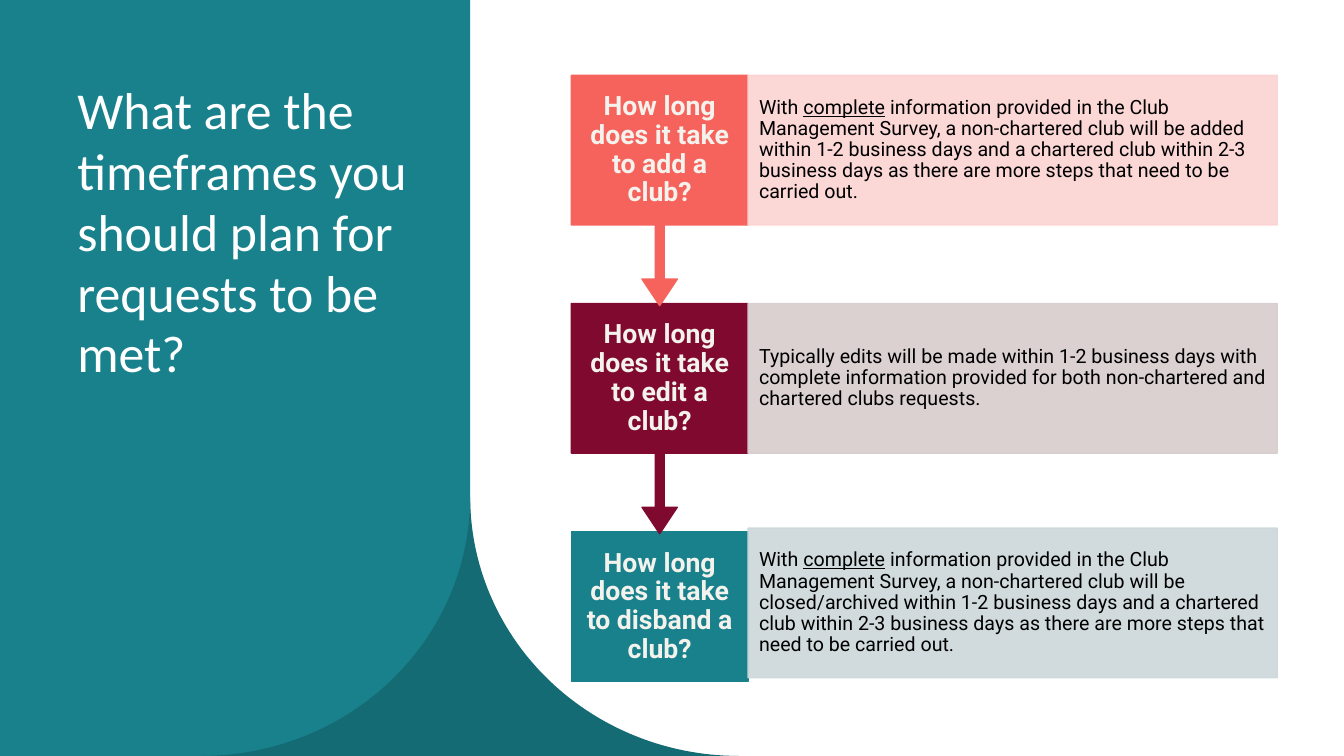
"""Build the slide on the timeframes for club requests."""
from math import cos, pi, sin

from lxml.etree import SubElement
from pptx import Presentation
from pptx.dml.color import RGBColor
from pptx.enum.shapes import MSO_SHAPE
from pptx.enum.text import MSO_ANCHOR, PP_ALIGN
from pptx.oxml.ns import qn
from pptx.util import Cm, Pt

TEAL = "18818C"


def paint(shape, color, opacity=100, line=True):
    """Give a shape one flat colour, with a matching outline if wanted."""
    shape.shadow.inherit = False
    fills = [shape.fill]
    if line:
        shape.line.width = Pt(1)
        fills.append(shape.line.fill)
    else:
        shape.line.fill.background()
    for fill in fills:
        fill.solid()
        fill.fore_color.rgb = RGBColor.from_string(color)
    if opacity < 100:
        for tone in shape._element.spPr.iter(qn("a:srgbClr")):
            SubElement(tone, qn("a:alpha"), val=str(opacity * 1000))


def write(box, runs, font, size, color, align=PP_ALIGN.LEFT, bold=False,
          spacing=0.9, anchor=MSO_ANCHOR.MIDDLE, margins=(0.28, 0.48)):
    """Write one paragraph of (text, underlined) runs into a box."""
    frame = box.text_frame
    frame.word_wrap = True
    frame.vertical_anchor = anchor
    frame.margin_left = frame.margin_right = Cm(margins[0])
    frame.margin_top = frame.margin_bottom = Cm(margins[1])
    para = frame.paragraphs[0]
    para.alignment = align
    para.line_spacing = spacing
    for text, underlined in runs:
        span = para.add_run()
        span.text = text
        span.font.name = font
        span.font.size = Pt(size)
        span.font.bold = bold
        span.font.underline = underlined
        span.font.color.rgb = RGBColor.from_string(color)


deck = Presentation()
deck.slide_width, deck.slide_height = Cm(33.87), Cm(19.05)
page = deck.slides.add_slide(deck.slide_layouts[6])

panel = page.shapes.add_shape(MSO_SHAPE.RECTANGLE, 0, 0, Cm(11.85), Cm(19.05))
paint(panel, TEAL, line=False)

radius_x, radius_y, steps = 6.77, 6.53, 60
angles = [pi / 2 * step / steps for step in range(steps + 1)]
left_arc = [(5.08 + radius_x * sin(a), 12.52 + radius_y * cos(a)) for a in angles]
right_arc = [(2 * 11.85 - x, y) for x, y in reversed(left_arc)]
outline = [(Cm(x), Cm(y)) for x, y in left_arc + right_arc]
builder = page.shapes.build_freeform(*outline[0])
builder.add_line_segments(outline[1:], close=True)
paint(builder.convert_to_shape(), "146B73", line=False)

title = page.shapes.add_textbox(Cm(1.7), Cm(1.9), Cm(9.07), Cm(12.9))
write(title, [("What are the timeframes you should plan for requests to be met?", False)],
      "Calibri", 37, "FFFFFF", spacing=0.98, anchor=MSO_ANCHOR.TOP, margins=(0.25, 0.13))

survey = " information provided in the Club Management Survey, a non-chartered club will be "
steps_left = " business days as there are more steps that need to be carried out."
requests = [
    ("add", "F6635C", "FBD3D2", 1.9, [
        ("With ", False), ("complete", True),
        (survey + "added within 1-2 business days and a chartered club within 2-3"
         + steps_left, False)]),
    ("edit", "800A2F", "D8CCCD", 7.65, [
        ("Typically edits will be made within 1-2 business days with complete information "
         "provided for both non-chartered and chartered clubs requests.", False)]),
    ("disband", TEAL, "CCD8DA", 13.31, [
        ("With ", False), ("complete", True),
        (survey + "closed/archived within 1-2 business days and a chartered club within 2-3"
         + steps_left, False)]),
]

for row, (action, strong, pale, detail_top, answer) in reversed(list(enumerate(requests))):
    is_last = row == len(requests) - 1
    kind = MSO_SHAPE.RECTANGLE if is_last else MSO_SHAPE.DOWN_ARROW_CALLOUT
    question = page.shapes.add_shape(kind, Cm(14.4), Cm(1.9 + 5.75 * row),
                                     Cm(4.45), Cm(3.77 if is_last else 5.8))
    if not is_last:
        for index, value in enumerate((0.05, 0.1, 0.15, 0.65)):
            question.adjustments[index] = value
    paint(question, strong)
    write(question, [(f"How long does it take to {action} a club?", False)], "Roboto", 19,
          "F4F2EC", align=PP_ALIGN.CENTER, bold=True, margins=(0.3, 0.38))

    detail = page.shapes.add_shape(MSO_SHAPE.RECTANGLE, Cm(18.85), Cm(detail_top),
                                   Cm(13.34), Cm(3.77))
    paint(detail, pale, opacity=90)
    write(detail, answer, "Roboto", 14, "000000")

deck.save("out.pptx")
